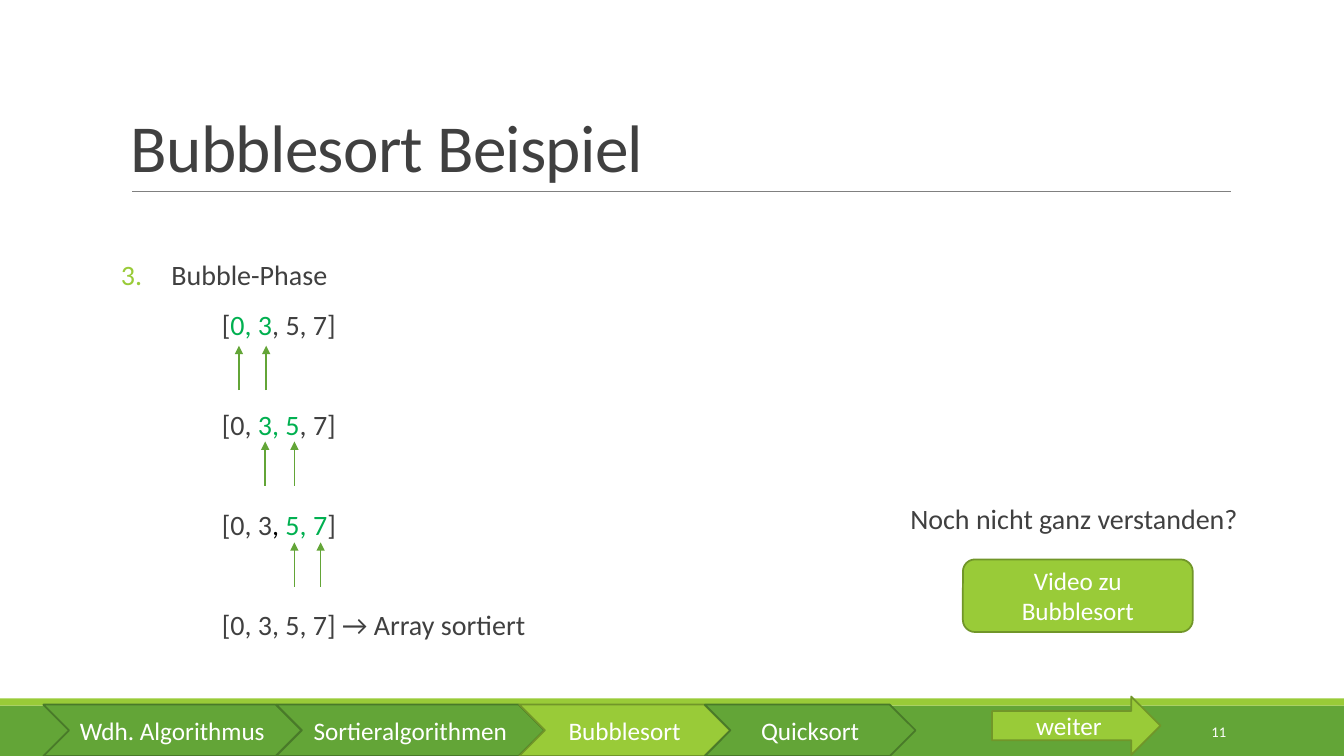
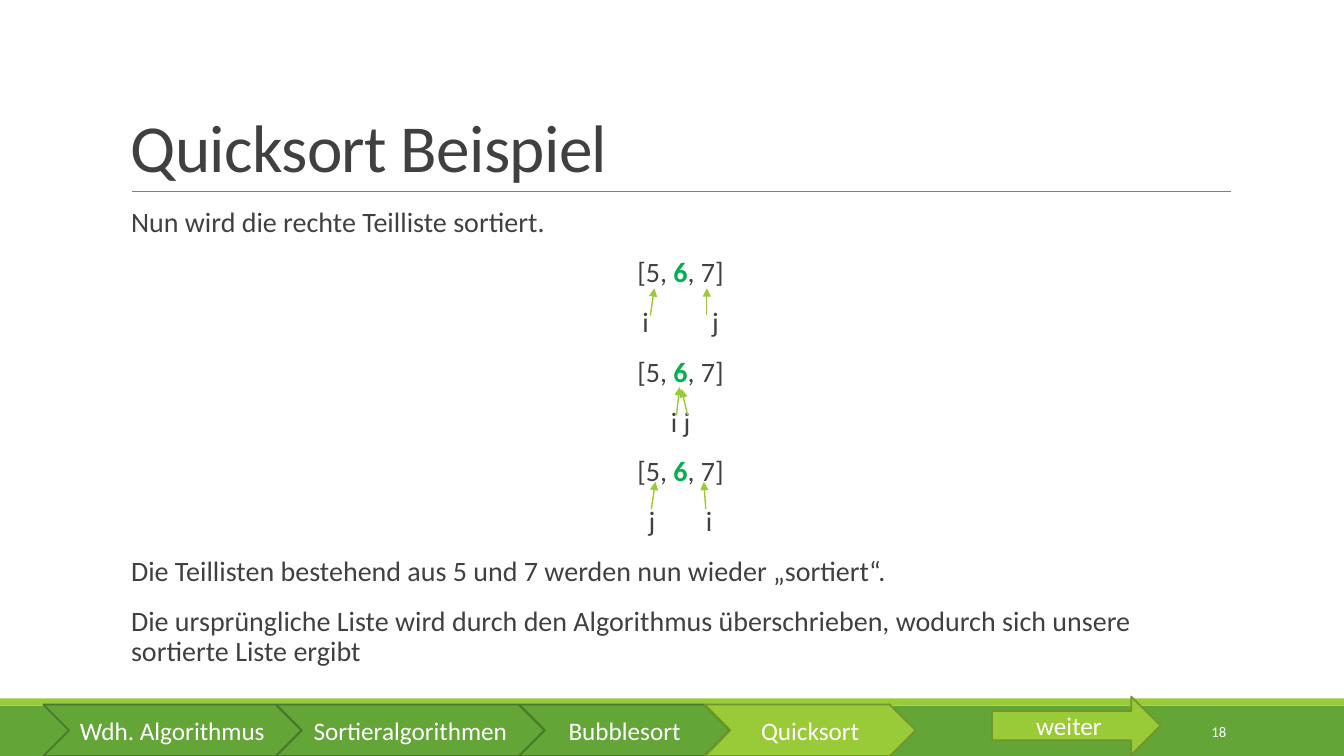
from lxml.etree import SubElement
from pptx import Presentation
from pptx.dml.color import RGBColor
from pptx.enum.shapes import MSO_CONNECTOR, MSO_SHAPE as SHAPE
from pptx.enum.text import MSO_ANCHOR as ANCHOR, PP_ALIGN as ALIGN
from pptx.oxml.ns import qn
from pptx.util import Inches, Pt

# Shared style
FONT = "Calibri"
WHITE = RGBColor(0xFF, 0xFF, 0xFF)
BLACK = RGBColor(0, 0, 0)
TEXT = RGBColor(0x40, 0x40, 0x40)
RULE = RGBColor(0x80, 0x80, 0x80)
GREEN = RGBColor(0x63, 0xA5, 0x37)
GREEN_EDGE = RGBColor(0x49, 0x7A, 0x29)
LIME = RGBColor(0x99, 0xCB, 0x38)
LIME_EDGE = RGBColor(0x71, 0x96, 0x29)
MARK = RGBColor(0x00, 0xB0, 0x50)

WIDTH, HEIGHT = 13.33, 7.5
LEFT, BODY_WIDTH = 1.2, 11
BODY_SIZE = 20
SPACE_BEFORE, SPACE_AFTER = 12, 2
LINE_PITCH = 36  # points from one body line to the next

# Navigation: chapter and chevron width
CHAPTERS = [("Wdh. Algorithmus", 2.56), ("Sortieralgorithmen", 2.66),
            ("Bubblesort", 2.09), ("Quicksort", 2.09)]
NAV_LEFT, NAV_TOP, NAV_HEIGHT, NAV_OVERLAP = 0.43, 6.99, 0.51, 0.25

# Bubblesort: each step is a list of (text, colour)
BUBBLE_STEPS = [
    [("[", TEXT), ("0, 3", MARK), (", 5, 7]", TEXT)],
    [("[0, ", TEXT), ("3, 5", MARK), (", 7]", TEXT)],
    [("[0, 3", TEXT), (",", BLACK), (" 5, 7", MARK), ("]", TEXT)],
    [("[0, 3, 5, 7] → Array sortiert", TEXT)],
]
# Foot of the arrows and their places across
COMPARED = [(3.87, (2.37, 2.64)), (4.82, (2.63, 2.92)), (5.82, (2.92, 3.18))]
COMPARED_LENGTH = 0.44

# Quicksort: pointer names and the extra points between them
PARTITION = [("[5, ", TEXT), ("6", MARK), (", 7]", TEXT)]
POINTERS = [("i", "j", 40.7), ("i", "j", 0), ("j", "i", 31.6)]
QUICK_INTRO = "Nun wird die rechte Teilliste sortiert."
QUICK_RESULT = [
    "Die Teillisten bestehend aus 5 und 7 werden nun wieder „sortiert“.",
    "Die ursprüngliche Liste wird durch den Algorithmus überschrieben, "
    "wodurch sich unsere sortierte Liste ergibt",
]
POINTER_ARROWS = [
    ((6.45, 3.13), (6.49, 2.86)), ((7.01, 3.13), (7.01, 2.86)),
    ((6.71, 4.12), (6.74, 3.84)), ((6.82, 4.12), (6.76, 3.86)),
    ((6.46, 5.05), (6.50, 4.78)), ((7.00, 5.05), (6.98, 4.78)),
]


def style(paragraph, size, colour, align=ALIGN.LEFT):
    paragraph.alignment = align
    font = paragraph.font
    font.name, font.size, font.color.rgb = FONT, Pt(size), colour


def set_tracking(run, points):
    run._r.get_or_add_rPr().set("spc", str(round(points * 100)))


def add_shape(slide, kind, box, fill, edge=None, label=None):
    shape = slide.shapes.add_shape(kind, *map(Inches, box))
    shape.shadow.inherit = False
    shape.fill.solid()
    shape.fill.fore_color.rgb = fill
    if edge is None:
        shape.line.fill.background()
    else:
        shape.line.color.rgb, shape.line.width = edge, Pt(1.25)
    if label:
        frame = shape.text_frame
        frame.word_wrap, frame.vertical_anchor = True, ANCHOR.MIDDLE
        frame.text = label
        style(frame.paragraphs[0], 18, WHITE, ALIGN.CENTER)


def add_line(slide, start, end, colour, width, arrow=True):
    line = slide.shapes.add_connector(MSO_CONNECTOR.STRAIGHT,
                                      *map(Inches, start + end))
    line.line.color.rgb, line.line.width = colour, Pt(width)
    if arrow:
        SubElement(line.line._get_or_add_ln(), qn("a:tailEnd"), type="triangle")
    SubElement(line._element.spPr, qn("a:effectLst"))


def add_frame(slide, box, anchor=ANCHOR.TOP):
    frame = slide.shapes.add_textbox(*map(Inches, box)).text_frame
    frame.word_wrap, frame.vertical_anchor = True, anchor
    return frame


def add_label(slide, box, text, size, colour, align=ALIGN.LEFT, anchor=ANCHOR.TOP):
    frame = add_frame(slide, box, anchor)
    frame.text = text
    style(frame.paragraphs[0], size, colour, align)
    return frame.paragraphs[0]


def add_body(slide, top, height):
    frame = add_frame(slide, (LEFT, top, BODY_WIDTH, height))
    frame.margin_left = frame.margin_right = 0
    return frame


def add_body_line(frame, parts, indent=0.1, hanging=0.0, skipped=0,
                  align=ALIGN.LEFT, number=None, bold_mark=False):
    """Add one body paragraph; skipped is the number of lines left free above."""
    first = frame.paragraphs[0]
    paragraph = frame.add_paragraph() if first.runs else first
    paragraph.line_spacing = 0.9
    paragraph.space_before = Pt(SPACE_BEFORE + skipped * LINE_PITCH)
    paragraph.space_after = Pt(SPACE_AFTER)
    properties = paragraph._p.get_or_add_pPr()
    properties.set("marL", str(Inches(indent)))
    properties.set("indent", str(Inches(-hanging)))
    if number:
        bullet_colour = SubElement(properties, qn("a:buClr"))
        SubElement(bullet_colour, qn("a:srgbClr"), val=str(LIME))
        SubElement(properties, qn("a:buAutoNum"), type="arabicPeriod",
                   startAt=str(number))
    style(paragraph, BODY_SIZE, TEXT, align)
    for text, colour in parts:
        run = paragraph.add_run()
        run.text = text
        if colour != TEXT:
            run.font.color.rgb = colour
            if bold_mark:
                run.font.bold = True
    return paragraph


def add_base(deck, title, chapter, number):
    """Title, rule, bands, navigation and slide number."""
    slide = deck.slides.add_slide(deck.slide_layouts[6])
    add_shape(slide, SHAPE.RECTANGLE, (0, 7, WIDTH, 0.5), GREEN)
    add_shape(slide, SHAPE.RECTANGLE, (0, 6.93, WIDTH, 0.07), LIME)
    add_line(slide, (1.31, 1.9), (12.21, 1.9), RULE, 0.5, arrow=False)
    heading = add_label(slide, (LEFT, 0.31, BODY_WIDTH, 1.59), title, 48, TEXT,
                        anchor=ANCHOR.BOTTOM)
    heading.line_spacing = 0.85
    set_tracking(heading.runs[0], -0.5)
    add_label(slide, (10.83, 7.06, 1.43, 0.4), str(number), 10.5, WHITE,
              ALIGN.RIGHT, ANCHOR.MIDDLE)
    add_shape(slide, SHAPE.RIGHT_ARROW, (9.84, 6.91, 1.67, 0.58),
              LIME, LIME_EDGE, "weiter")
    left = NAV_LEFT
    for name, width in CHAPTERS:
        fill, edge = (LIME, LIME_EDGE) if name == chapter else (GREEN, GREEN_EDGE)
        add_shape(slide, SHAPE.CHEVRON, (left, NAV_TOP, width, NAV_HEIGHT),
                  fill, edge, name)
        left += width - NAV_OVERLAP
    return slide


def build_bubblesort(deck):
    slide = add_base(deck, "Bubblesort Beispiel", "Bubblesort", 11)
    body = add_body(slide, 2.54, 3.88)
    add_body_line(body, [("Bubble-Phase", TEXT)], 0.5, 0.5, number=3)
    for index, step in enumerate(BUBBLE_STEPS):
        add_body_line(body, step, indent=1, skipped=min(index, 1))
    for foot, places in COMPARED:
        for x in places:
            add_line(slide, (x, foot), (x, foot - COMPARED_LENGTH), GREEN, 1.25)
    # Link to the video
    add_label(slide, (8.93, 4.93, 3.53, 0.44), "Noch nicht ganz verstanden?",
              BODY_SIZE, TEXT)
    add_shape(slide, SHAPE.ROUNDED_RECTANGLE, (9.55, 5.55, 2.28, 0.72),
              LIME, LIME_EDGE, "Video zu Bubblesort")


def build_quicksort(deck):
    slide = add_base(deck, "Quicksort Beispiel", "Quicksort", 18)
    body = add_body(slide, 2.02, 4.73)
    add_body_line(body, [(QUICK_INTRO, TEXT)])
    for first, second, gap in POINTERS:
        add_body_line(body, PARTITION, align=ALIGN.CENTER, bold_mark=True)
        names = add_body_line(body, [(first, TEXT), (" ", TEXT), (second, TEXT)],
                              align=ALIGN.CENTER)
        set_tracking(names.runs[1], gap)
    for sentence in QUICK_RESULT:
        add_body_line(body, [(sentence, TEXT)])
    for start, end in POINTER_ARROWS:
        add_line(slide, start, end, LIME, 1)


def main():
    deck = Presentation()
    deck.slide_width, deck.slide_height = Inches(WIDTH), Inches(HEIGHT)
    build_bubblesort(deck)
    build_quicksort(deck)
    deck.save("out.pptx")


if __name__ == "__main__":
    main()
